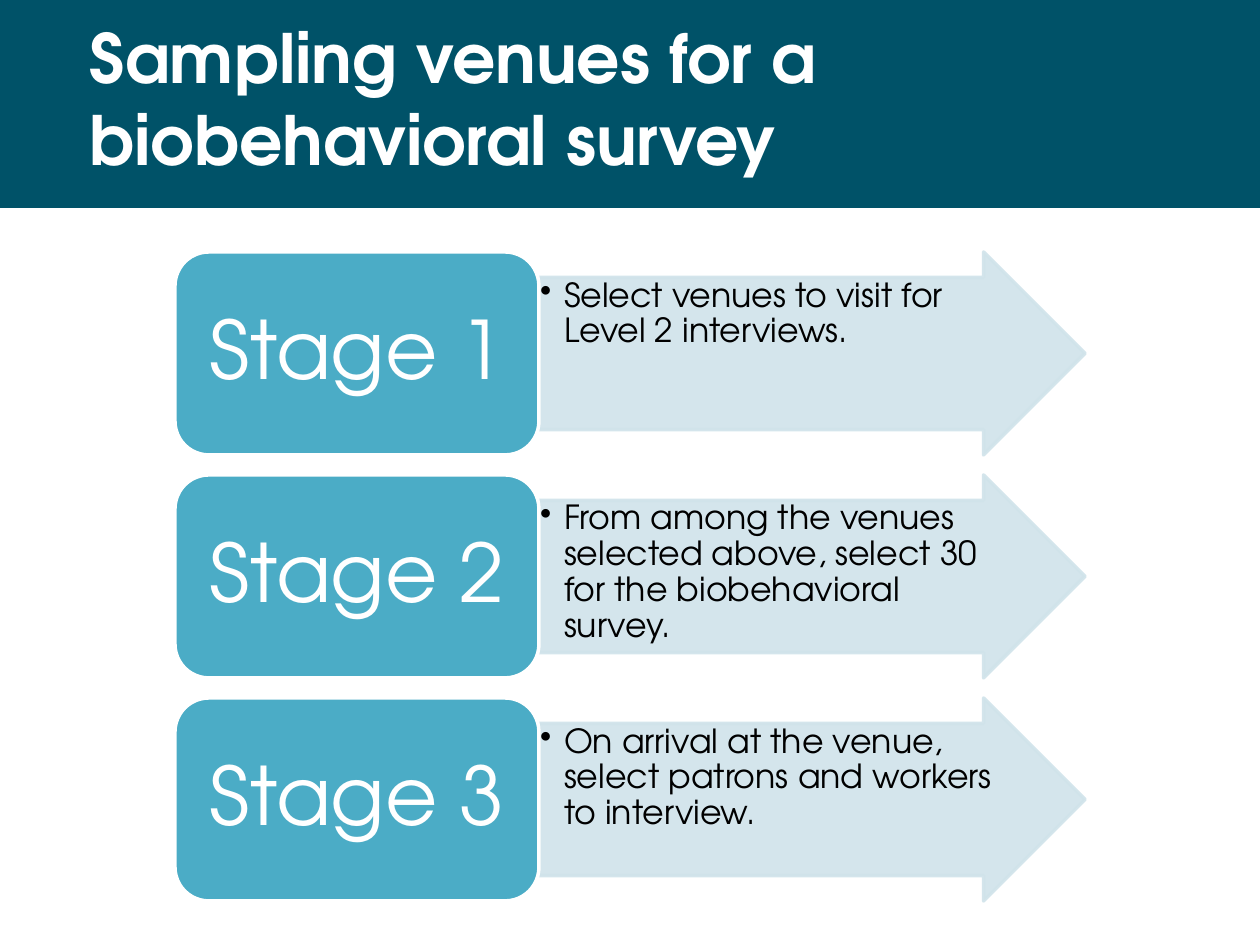
from typing import NamedTuple

from lxml.etree import SubElement as Sub
from pptx import Presentation
from pptx.dml.color import RGBColor as RGB
from pptx.enum.shapes import MSO_SHAPE as Kind
from pptx.enum.text import MSO_ANCHOR as Anchor, PP_ALIGN as Align
from pptx.oxml.ns import qn
from pptx.util import Emu, Pt

FONT = "TeX Gyre Adventor"
HUE = {
    "band": "005268",
    "arrow": "D0E3EA",
    "stage": "4BACC6",
    "white": "FFFFFF",
    "black": "000000",
}
TOP, STEP, HIGH = 252, 223, 203
LEFT, WIDE, REACH = 175, 364, 546


class Box(NamedTuple):
    x: int
    y: int
    w: int
    h: int


class Stage(NamedTuple):
    name: str
    task: str


STAGES = [
    Stage("Stage 1", "Select venues to visit for Level 2 interviews."),
    Stage("Stage 2", "From among the venues selected above, select 30 "
                     "for the biobehavioral survey."),
    Stage("Stage 3", "On arrival at the venue, select patrons and workers "
                     "to interview."),
]


def px(n: int) -> Emu:
    return Emu(round(n * 914400 / 126))


def fade(fill, pct: int) -> None:
    """Make a solid fill partly see-through."""
    tone = fill._xPr.find(qn("a:solidFill"))[0]
    Sub(tone, qn("a:alpha"), val=str(pct * 1000))


def draw(slide, kind: Kind, box: Box, fill: str, edge: str):
    shape = slide.shapes.add_shape(kind, *map(px, box))
    shape.shadow.inherit = False
    shape.fill.solid()
    shape.fill.fore_color.rgb = RGB.from_string(HUE[fill])
    shape.line.color.rgb = RGB.from_string(HUE[edge])
    shape.line.width = Pt(2)
    return shape


def pad(frame, side: int, end: int) -> None:
    frame.word_wrap = True
    frame.margin_left = frame.margin_right = px(side)
    frame.margin_top = frame.margin_bottom = px(end)


def write(para, text: str, size: float, hue: str, bold: bool = False) -> None:
    run = para.add_run()
    run.text = text
    run.font.name = FONT
    run.font.size = Pt(size)
    run.font.bold = bold
    run.font.color.rgb = RGB.from_string(HUE[hue])


def bullet(para, dent: int) -> None:
    props = para._p.get_or_add_pPr()
    props.set("marL", str(px(dent)))
    props.set("indent", str(-px(dent)))
    Sub(props, qn("a:buChar"), char="•")


def add_head(slide) -> None:
    band = draw(slide, Kind.RECTANGLE, Box(0, -5, 1260, 213), "band", "band")
    band.line.fill.background()
    box = Box(77, 47, 1096, 138)
    frame = slide.shapes.add_textbox(*map(px, box)).text_frame
    pad(frame, 13, 6)
    frame.vertical_anchor = Anchor.BOTTOM
    write(frame.paragraphs[0], "Sampling venues for a biobehavioral survey",
          38.8, "white", True)


def add_stage(slide, stage: Stage, y: int) -> None:
    box = Box(LEFT + WIDE, y, REACH, HIGH)
    arrow = draw(slide, Kind.RIGHT_ARROW, box, "arrow", "arrow")
    arrow.adjustments[0] = 0.75
    arrow.adjustments[1] = 0.5
    fade(arrow.fill, 90)
    fade(arrow.line.fill, 90)
    frame = arrow.text_frame
    pad(frame, 1, 1)
    frame.vertical_anchor = Anchor.TOP
    para = frame.paragraphs[0]
    para.level = 1
    para.alignment = Align.LEFT
    para.line_spacing = 0.9
    bullet(para, 24)
    write(para, stage.task, 19, "black")

    box = Box(LEFT, y, WIDE, HIGH)
    label = draw(slide, Kind.ROUNDED_RECTANGLE, box, "stage", "white")
    frame = label.text_frame
    pad(frame, 24, 12)
    frame.vertical_anchor = Anchor.MIDDLE
    para = frame.paragraphs[0]
    para.alignment = Align.CENTER
    para.line_spacing = 0.9
    write(para, stage.name, 46, "white")


def main() -> None:
    deck = Presentation()
    deck.slide_width, deck.slide_height = px(1260), px(945)
    slide = deck.slides.add_slide(deck.slide_layouts[6])
    add_head(slide)
    for i, stage in enumerate(STAGES):
        add_stage(slide, stage, TOP + i * STEP)
    deck.save("out.pptx")


if __name__ == "__main__":
    main()
